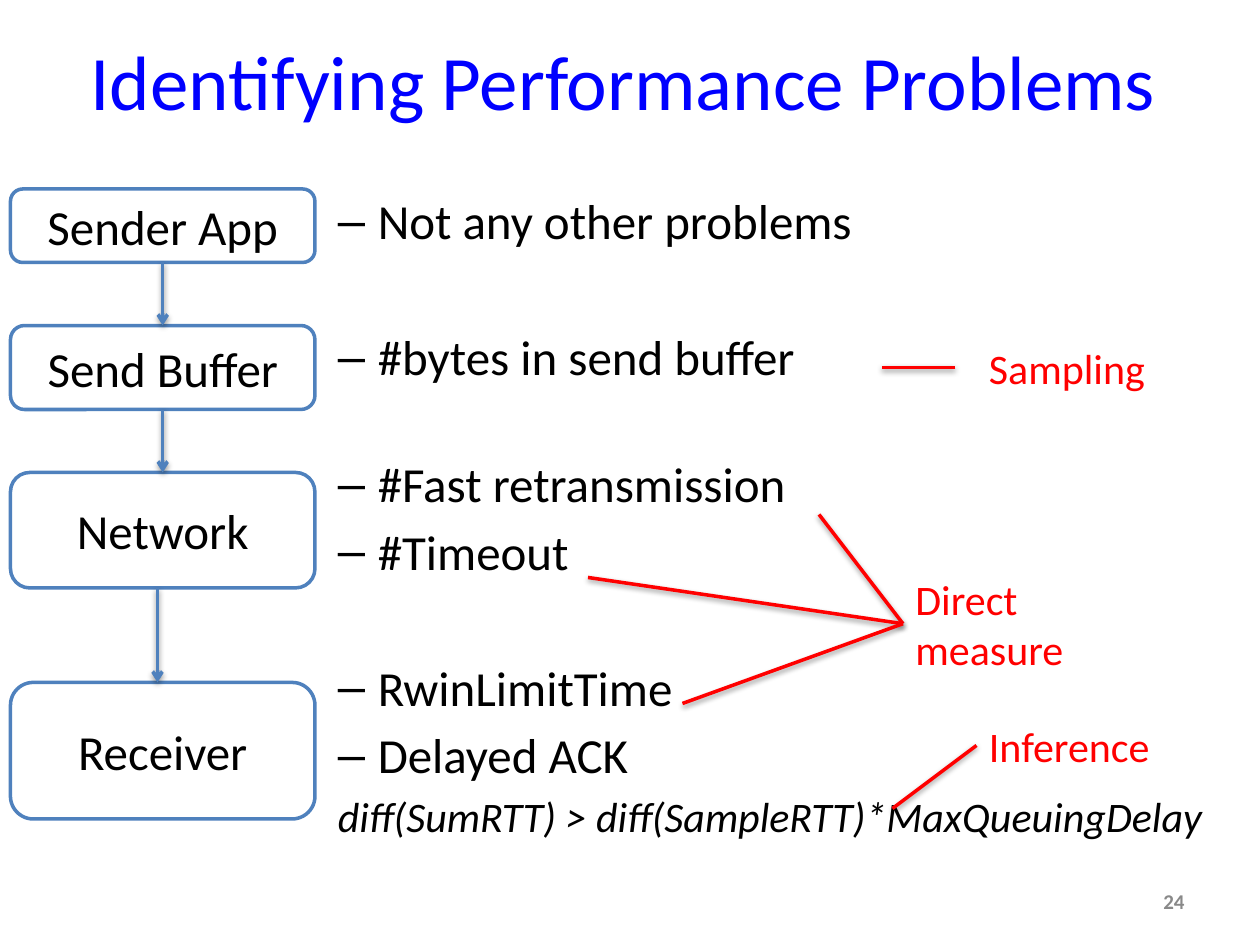
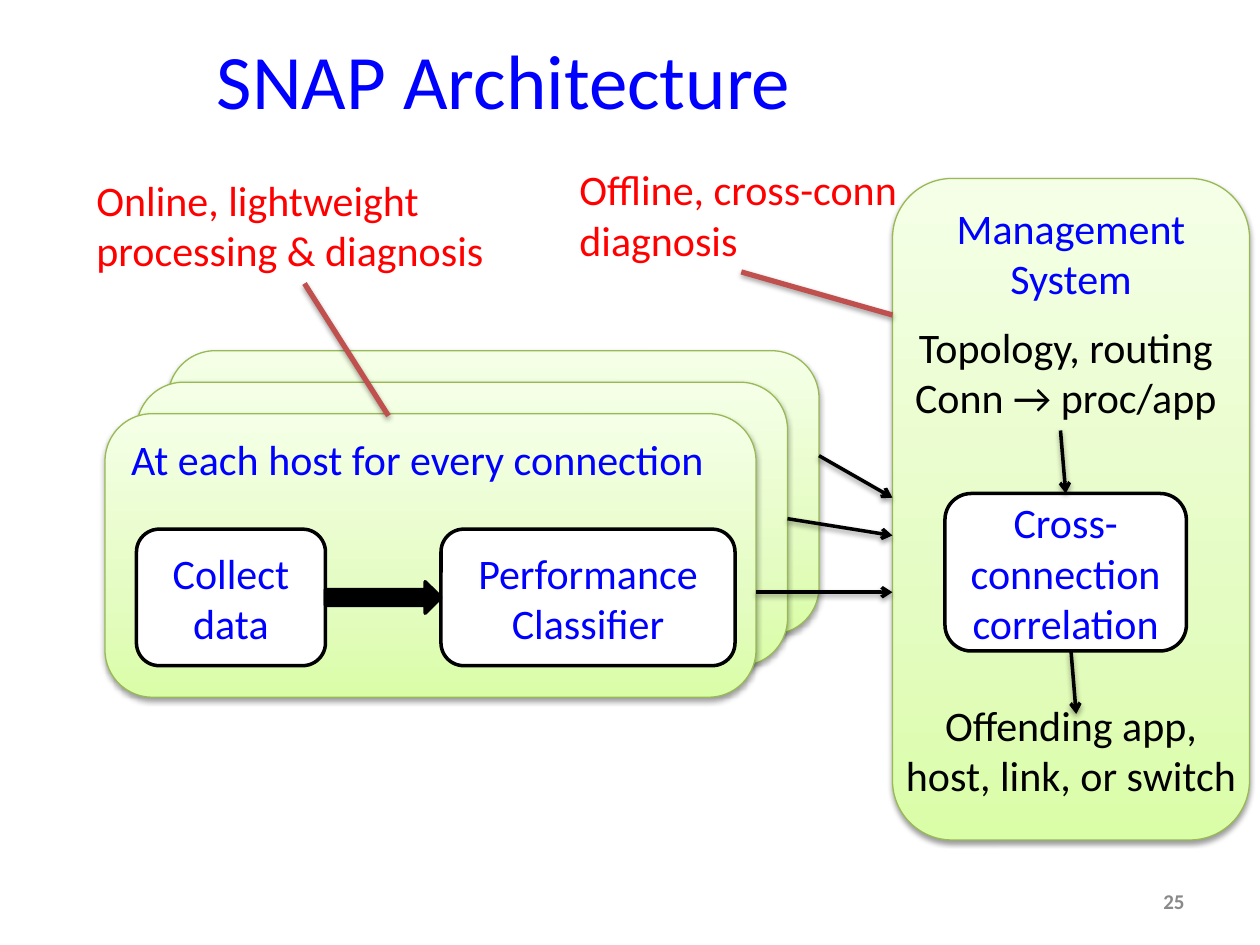
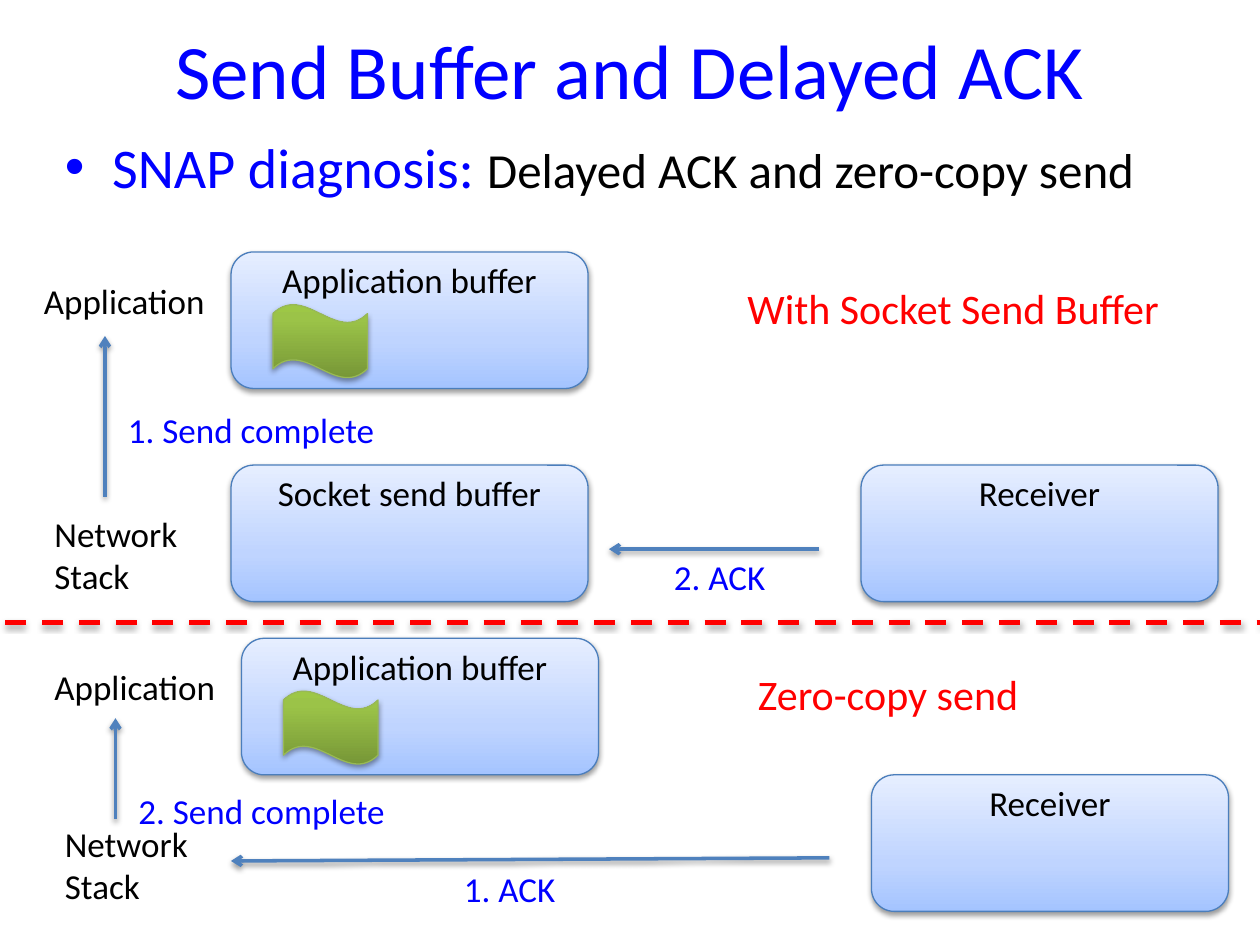
from itertools import pairwise

from lxml.etree import SubElement
from pptx import Presentation
from pptx.dml.color import RGBColor
from pptx.enum.dml import MSO_LINE
from pptx.enum.shapes import MSO_CONNECTOR, MSO_SHAPE as SHAPE
from pptx.enum.text import MSO_ANCHOR as ANCHOR, MSO_AUTO_SIZE, PP_ALIGN as ALIGN
from pptx.oxml.ns import qn
from pptx.util import Emu, Pt

PX = 7620  # EMU, 120 px to the inch
WIDTH, HEIGHT = 1200, 900
TITLE_ONLY = 5

COLORS = {
    "blue": "0000FF", "red": "FF0000", "black": "000000", "white": "FFFFFF",
    "grey": "898989", "steel": "4F81BD", "brick": "C0504D",
    "leaf edge": "98B955", "sky edge": "4B7EBC",
}
GRADIENTS = {
    "leaf": [(0, "DAFDA7"), (35, "E4FCC2"), (100, "F5FFE7")],
    "sky": [(0, "A4C4FF"), (35, "BFD4FF"), (100, "E6EEFF")],
    "flag": [(0, "779737"), (80, "9BC348"), (100, "9DC746")],
}


def px(length):
    return Emu(round(length * PX))


def rgb(name):
    return RGBColor.from_string(COLORS[name])


def set_all(target, values):
    for name, value in values.items():
        setattr(target, name, value)


def add_xml(parent, tag, **attributes):
    return SubElement(parent, qn(tag), {key: str(value) for key, value in attributes.items()})


class Painter:
    """Holds the deck, its text style and the slide being drawn."""

    font = "Calibri"

    def __init__(self):
        self.deck = Presentation()
        set_all(self.deck, {"slide_width": px(WIDTH), "slide_height": px(HEIGHT)})
        self.page = None

    def new_page(self, title, number, area):
        self.page = self.deck.slides.add_slide(self.deck.slide_layouts[TITLE_ONLY])
        holder = self.page.shapes.title
        set_all(holder, dict(zip(("left", "top", "width", "height"), map(px, area))))
        self.fill_text(holder, [title], 44, "blue", ALIGN.CENTER, ANCHOR.MIDDLE)
        self.text((860, 834, 280, 48), [str(number)], 12, "grey",
                  ALIGN.RIGHT, ANCHOR.MIDDLE, bold=True)

    def span(self, para, words, size, color, **formats):
        span = para.add_run()
        span.text = words
        set_all(span.font, {"name": self.font, "size": Pt(size), **formats})
        span.font.color.rgb = rgb(color)

    def fill_text(self, box, lines, size, color, align=ALIGN.LEFT, anchor=ANCHOR.TOP,
                  **formats):
        frame = box.text_frame
        set_all(frame, {"word_wrap": True, "auto_size": MSO_AUTO_SIZE.NONE,
                        "vertical_anchor": anchor})
        for index, line in enumerate(lines):
            para = frame.add_paragraph() if index else frame.paragraphs[0]
            para.alignment = align
            self.span(para, line, size, color, **formats)

    def text(self, area, lines, size, color, align=ALIGN.LEFT, anchor=ANCHOR.TOP, **formats):
        box = self.page.shapes.add_textbox(*map(px, area))
        self.fill_text(box, lines, size, color, align, anchor, **formats)
        return box

    def indent(self, para, margin, hang, before, mark=None):
        para.space_before = Pt(before)
        props = para._p.get_or_add_pPr()
        props.set("marL", str(px(margin)))
        props.set("indent", str(px(-hang)))
        if mark:
            add_xml(props, "a:buFont", typeface="Arial")
            add_xml(props, "a:buChar", char=mark)

    def shadow(self, item, blur=3.15, distance=1.6, opacity=38):
        props = item._element.spPr
        effects = props.find(qn("a:effectLst"))
        if effects is None:
            effects = add_xml(props, "a:effectLst")
        outer = add_xml(effects, "a:outerShdw", blurRad=Pt(blur), dist=Pt(distance),
                        dir=5400000, rotWithShape=0)
        tint = add_xml(outer, "a:srgbClr", val=COLORS["black"])
        add_xml(tint, "a:alpha", val=opacity * 1000)

    def shape(self, area, fill, edge, weight=2, kind=SHAPE.ROUNDED_RECTANGLE):
        shape = self.page.shapes.add_shape(kind, *map(px, area))
        shape.shadow.inherit = False
        shape.line.color.rgb = rgb(edge)
        shape.line.width = Pt(weight)
        if fill in GRADIENTS:
            self.gradient(shape, GRADIENTS[fill])
            self.shadow(shape)
        else:
            shape.fill.solid()
            shape.fill.fore_color.rgb = rgb(fill)
        return shape

    def gradient(self, shape, stops):
        """Run the stops from the bottom edge up."""
        shape.fill.gradient()
        shape.fill.gradient_angle = 90
        stop_list = shape._element.spPr.find(qn("a:gradFill")).find(qn("a:gsLst"))
        for old in list(stop_list):
            stop_list.remove(old)
        for position, color in stops:
            stop = add_xml(stop_list, "a:gs", pos=position * 1000)
            add_xml(stop, "a:srgbClr", val=color)

    def box(self, area, label, size, color, edge):
        shape = self.shape(area, "white", edge)
        self.fill_text(shape, [label], size, color, ALIGN.CENTER, ANCHOR.MIDDLE)

    def buffer(self, left, top, label):
        shape = self.shape((left, top, 340, 130), "sky", "sky edge", 0.75)
        self.fill_text(shape, [label], 20, "black", ALIGN.CENTER)
        set_all(shape.text_frame, {"margin_top": 0, "margin_bottom": 0})

    def line(self, start, end, color, weight=2, arrow=False, dash=None):
        line = self.page.shapes.add_connector(MSO_CONNECTOR.STRAIGHT, *map(px, start + end))
        line.line.color.rgb = rgb(color)
        line.line.width = Pt(weight)
        if dash:
            line.line.dash_style = dash
        if arrow:
            add_xml(line.line._get_or_add_ln(), "a:tailEnd", type="arrow")
        self.shadow(line)


def draw_problems(painter):
    painter.new_page("Identifying Performance Problems", 24, (4, 1, 1180, 150))

    symptoms = [  # words, space before in points
        ("Not any other problems", 1),
        ("#bytes in send buffer", 44),
        ("#Fast retransmission", 39),
        ("#Timeout", 5),
        ("RwinLimitTime", 44),
        ("Delayed ACK", 5),
    ]
    body = painter.text((250, 176, 950, 594), [words for words, _ in symptoms], 28, "black")
    for para, (_, before) in zip(body.text_frame.paragraphs, symptoms):
        painter.indent(para, 98, 38, before, "–")
    formula = body.text_frame.add_paragraph()
    painter.indent(formula, 60, 0, 4)
    painter.span(formula, "diff(SumRTT) > diff(SampleRTT)*MaxQueuingDelay", 24, "black",
                 italic=True)

    stages = [  # label, top, height, x of the arrow below
        ("Sender App", 180, 70, 155),
        ("Send Buffer", 310, 80, 155),
        ("Network", 450, 110, 150),
        ("Receiver", 650, 130, None),
    ]
    for label, top, height, _ in stages:
        painter.box((10, top, 290, height), label, 28, "black", "steel")
    for (_, top, height, x), (_, next_top, _, _) in pairwise(stages):
        painter.line((x, top + height), (x, next_top), "steel", arrow=True)

    methods = [  # lines, left, top, height, line start, line ends
        (["Sampling"], 930, 320, 60, (910, 350), [(840, 350)]),
        (["Direct", "measure"], 860, 540, 109, (860, 594),
         [(780, 490), (560, 550), (650, 670)]),
        (["Inference"], 930, 680, 60, (930, 710), [(850, 770)]),
    ]
    for lines, left, top, height, start, ends in methods:
        painter.text((left, top, 200, height), lines, 24, "red")
        for end in ends:
            painter.line(start, end, "red")


def draw_architecture(painter):
    painter.new_page("SNAP Architecture", 25, (0, 0, 960, 150))

    manager = painter.shape((850, 170, 340, 630), "leaf", "leaf edge", 0.75)
    painter.fill_text(manager, ["Management System"], 24, "blue", ALIGN.CENTER)
    for step in range(3):
        host = painter.shape((160 - 30 * step, 334 + 30 * step, 620, 270),
                             "leaf", "leaf edge", 0.75)
    painter.fill_text(host, ["At each host for every connection"], 24, "blue")

    for area, label in [
        ((130, 504, 180, 130), "Collect data"),
        ((420, 504, 280, 130), "Performance Classifier"),
        ((900, 470, 230, 150), "Cross-connection correlation"),
    ]:
        painter.box(area, label, 24, "blue", "black")
    painter.shape((310, 554, 110, 30), "black", "black", kind=SHAPE.RIGHT_ARROW)

    for start, end in [
        ((780, 434), (850, 474)),
        ((750, 494), (850, 510)),
        ((720, 564), (850, 564)),
        ((1010, 410), (1015, 470)),
        ((1020, 620), (1025, 680)),
    ]:
        painter.line(start, end, "black", arrow=True)

    for area, lines in [
        ((850, 300, 330, 109), ["Topology, routing", "Conn → proc/app"]),
        ((850, 660, 340, 109), ["Offending app,", "host, link, or switch"]),
    ]:
        painter.text(area, lines, 24, "black", ALIGN.CENTER)

    for area, words, start, end in [
        ((80, 160, 400, 109), "Online, lightweight processing & diagnosis",
         (290, 270), (370, 396)),
        ((540, 150, 330, 109), "Offline, cross-conn diagnosis", (706, 259), (850, 300)),
    ]:
        painter.text(area, [words], 24, "red")
        painter.line(start, end, "brick", 3)


def draw_scene(painter, left, app_top, stack_top, heading, complete, ack):
    """Draw the application, network stack and receiver of one way of sending."""
    painter.buffer(left + 190, app_top, "Application buffer")
    painter.shape((left + 230, app_top + 50, 90, 70), "flag", "leaf edge", 0.75, SHAPE.WAVE)
    painter.text((left, app_top + 20, 220, 53), ["Application"], 20, "black")
    painter.text((left + 670, app_top + 23, 440, 60), [heading], 24, "red")
    painter.text((left + 10, stack_top + 39, 150, 92), ["Network", "Stack"], 20, "black")
    painter.buffer(left + 790, stack_top, "Receiver")
    for label, spot, start, end in (complete, ack):
        painter.text((*spot, 280, 53), [label], 20, "blue")
        painter.line(start, end, "steel", arrow=True)


def draw_delayed_ack(painter):
    painter.new_page("Send Buffer and Delayed ACK", 29, (0, 0, WIDTH, 130))
    body = painter.text((50, 120, 1110, 90), ["SNAP diagnosis: "], 32, "blue")
    diagnosis = body.text_frame.paragraphs[0]
    painter.indent(diagnosis, 45, 45, 1, "•")
    painter.span(diagnosis, "Delayed ACK and zero-copy send", 28, "black")

    painter.buffer(220, 443, "Socket send buffer")
    draw_scene(painter, 30, 240, 443, "With Socket Send Buffer",
               ("1. Send complete", (110, 383), (100, 473), (100, 320)),
               ("2. ACK", (630, 523), (780, 523), (580, 523)))
    draw_scene(painter, 40, 608, 738, "Zero-copy send",
               ("2. Send complete", (120, 746), (110, 780), (110, 684)),
               ("1. ACK", (430, 820), (790, 817), (220, 820)))
    painter.line((5, 593), (WIDTH, 593), "red", 3, dash=MSO_LINE.DASH)


def main():
    painter = Painter()
    draw_problems(painter)
    draw_architecture(painter)
    draw_delayed_ack(painter)
    painter.deck.save("out.pptx")


if __name__ == "__main__":
    main()
